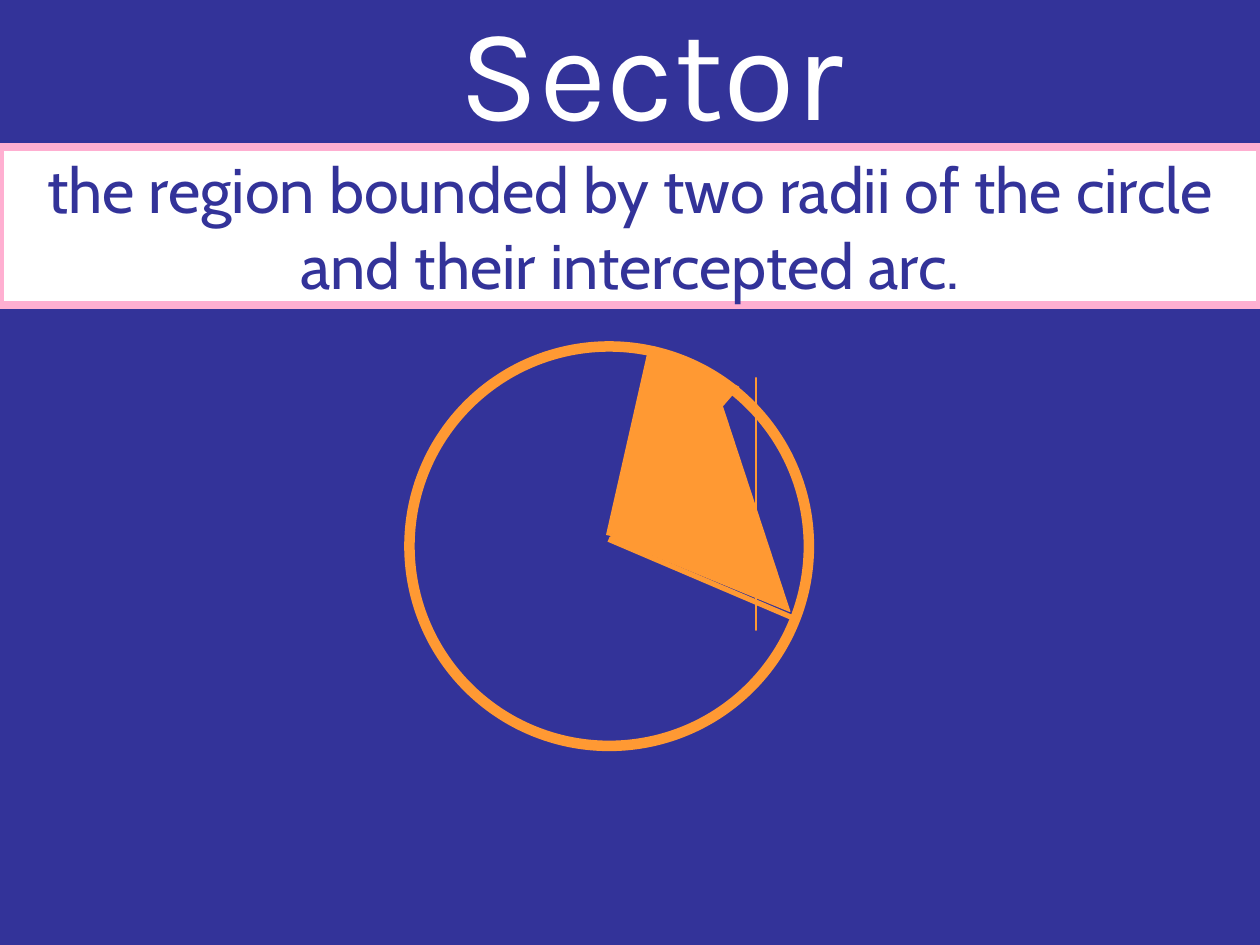
from dataclasses import dataclass

from lxml import etree
from pptx import Presentation
from pptx.dml.color import RGBColor
from pptx.enum.shapes import MSO_CONNECTOR, MSO_SHAPE
from pptx.enum.text import MSO_ANCHOR, MSO_AUTO_SIZE, PP_ALIGN
from pptx.oxml.ns import qn
from pptx.util import Inches, Pt

STRAIGHT = MSO_CONNECTOR.STRAIGHT
OVAL, TRIANGLE = MSO_SHAPE.OVAL, MSO_SHAPE.ISOSCELES_TRIANGLE
MIDDLE, CENTER, NO_FIT = MSO_ANCHOR.MIDDLE, PP_ALIGN.CENTER, MSO_AUTO_SIZE.NONE


@dataclass(frozen=True)
class Theme:
    navy: RGBColor = RGBColor.from_string("333399")
    white: RGBColor = RGBColor.from_string("FFFFFF")
    pink: RGBColor = RGBColor.from_string("FFAFD1")
    orange: RGBColor = RGBColor.from_string("FF9933")
    red: RGBColor = RGBColor.from_string("FF0000")
    term_size: Pt = Pt(75)
    definition_size: Pt = Pt(36)
    term_font: str = "Karla"
    definition_font: str = "Cabin"


theme = Theme()


def paint(shape, fill, line, width):
    shape.shadow.inherit = False
    if fill is None:
        shape.fill.background()
    else:
        shape.fill.solid()
        shape.fill.fore_color.rgb = fill
    shape.line.color.rgb = line
    shape.line.width = Pt(width)


def trace(shapes, points, close):
    outline = shapes.build_freeform(*points[0], scale=Inches(1))
    outline.add_line_segments(points[1:], close=close)
    return outline.convert_to_shape()


prs = Presentation()
prs.slide_width, prs.slide_height = Inches(10), Inches(7.5)
slide = prs.slides.add_slide(prs.slide_layouts[0])
slide.background.fill.solid()
slide.background.fill.fore_color.rgb = theme.navy

term, definition = slide.placeholders
wordings = [
    (term, "Sector", (0.92, 0, 8.5, 1.08), theme.navy,
     {"name": theme.term_font, "size": theme.term_size}, theme.white),
    (definition, "the region bounded by two radii of the circle and their intercepted arc.",
     (0, 1.17, 10, 1.25), theme.white,
     {"name": theme.definition_font, "size": theme.definition_size}, theme.navy),
]
for holder, wording, box, fill, font_format, color in wordings:
    holder.left, holder.top, holder.width, holder.height = map(Inches, box)
    holder.fill.solid()
    holder.fill.fore_color.rgb = fill
    frame = holder.text_frame
    frame.text = wording
    frame_format = {"vertical_anchor": MIDDLE, "word_wrap": True, "auto_size": NO_FIT}
    for attribute, value in frame_format.items():
        setattr(frame, attribute, value)
    paragraph = frame.paragraphs[0]
    paragraph.alignment = CENTER
    paragraph.space_before = Pt(0)
    font = paragraph.runs[0].font
    for attribute, value in font_format.items():
        setattr(font, attribute, value)
    font.color.rgb = color
definition.line.color.rgb = theme.pink
definition.line.width = Pt(4.5)

diagram = slide.shapes.add_group_shape().shapes
circle = diagram.add_shape(OVAL, *map(Inches, (3.25, 2.75, 3.17, 3.17)))
paint(circle, None, theme.orange, 6)

radii = [
    ((4.83, 4.28), (4.83, 4.28), True),
    ((4.83, 4.28), (6.33, 4.92), False),
    ((4.83, 4.25), (5.17, 2.75), False),
]
for start, end, dotted in radii:
    radius = diagram.add_connector(STRAIGHT, *map(Inches, start + end))
    radius.line.color.rgb = theme.orange
    radius.line.width = Pt(3)
    if dotted:
        etree.SubElement(radius.line._get_or_add_ln(), qn("a:tailEnd"), type="oval")
    etree.SubElement(radius._element.spPr, qn("a:effectLst"))

wedges = [
    ((4.4, 3.5, 2, 1.17), 251.8, 0.5),
    ((4.83, 2.84, 0.75, 1.49), 205.4, 0.552),
]
for box, angle, apex in wedges:
    wedge = diagram.add_shape(TRIANGLE, *map(Inches, box))
    wedge.rotation = angle
    wedge.adjustments[0] = apex
    paint(wedge, theme.orange, theme.orange, 0.75)

arc_fillings = [
    [(5.75, 3.08), (6.08, 3.33), (6.33, 4.08), (6.33, 4.83), (6.25, 4.92), (5.67, 3)],
    [(6.08, 3.42), (6.33, 4.75), (6.42, 4.5), (6.42, 4), (6.33, 3.83), (6.17, 3.5)],
]
for points in arc_fillings:
    paint(trace(diagram, points, True), theme.orange, theme.orange, 0.75)

center_scribble = [
    (4.85, 4.25), (4.83, 4.21), (4.8, 4.22), (4.79, 4.28), (4.84, 4.29), (4.86, 4.26),
    (4.86, 4.21), (4.83, 4.2), (4.79, 4.23), (4.79, 4.27), (4.82, 4.3), (4.86, 4.28),
    (4.85, 4.23), (4.81, 4.21), (4.78, 4.24), (4.76, 4.27), (4.77, 4.3), (4.8, 4.32),
    (4.84, 4.32), (4.86, 4.29), (4.86, 4.24), (4.83, 4.23), (4.8, 4.26), (4.81, 4.27),
]
paint(trace(slide.shapes, center_scribble, False), None, theme.red, 3)

prs.save("out.pptx")
